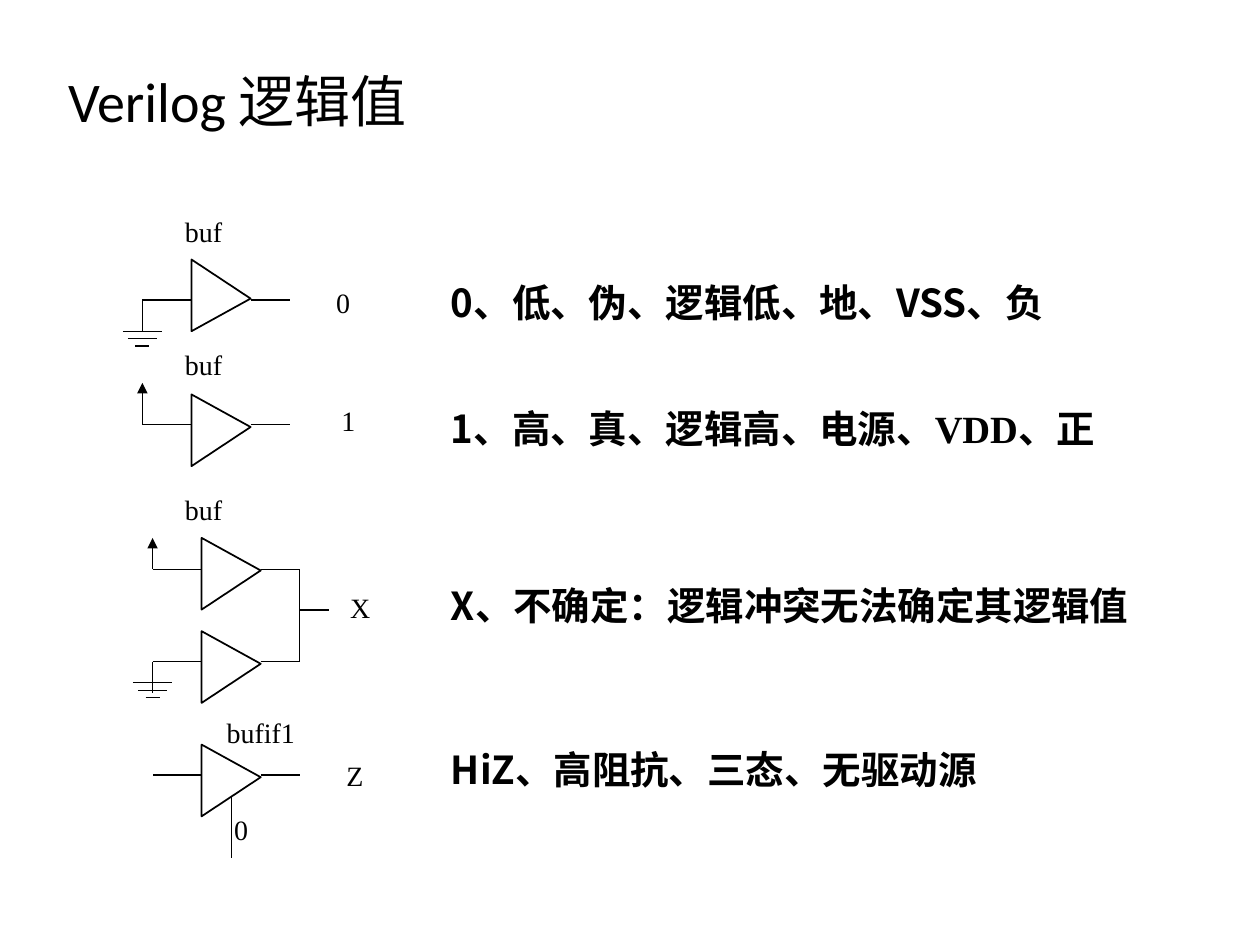
from lxml import etree
from pptx import Presentation
from pptx.dml.color import RGBColor
from pptx.enum.shapes import MSO_CONNECTOR, MSO_SHAPE
from pptx.enum.text import MSO_ANCHOR, MSO_AUTO_SIZE, PP_ALIGN
from pptx.oxml.ns import qn
from pptx.util import Pt

STRAIGHT = MSO_CONNECTOR.STRAIGHT
TRIANGLE, RECTANGLE = MSO_SHAPE.ISOSCELES_TRIANGLE, MSO_SHAPE.RECTANGLE
TOP, MIDDLE = MSO_ANCHOR.TOP, MSO_ANCHOR.MIDDLE
GROW, NO_AUTOFIT = MSO_AUTO_SIZE.SHAPE_TO_FIT_TEXT, MSO_AUTO_SIZE.NONE
LEFT, JUSTIFY = PP_ALIGN.LEFT, PP_ALIGN.JUSTIFY

BLACK = RGBColor(0x00, 0x00, 0x00)
WHITE = RGBColor(0xFF, 0xFF, 0xFF)
TITLE_FONT, TEXT_FONT, LABEL_FONT = "Calibri", "Noto Sans CJK SC", "Times New Roman"

GATE_WIDTH, GATE_HEIGHT = 33.8, 41
INPUT_LENGTH, OUTPUT_LENGTH = 28, 22.3
THICK, THIN = 1, 0.75

GATES = {
    "low": (109.4, 148.3, 171.4, 0.545),
    "high": (109.4, 225.4, 242.6, 0.455),
    "conflict_high": (115.2, 307.4, 325.4, 0.455),
    "conflict_low": (115.2, 360.7, 378, 0.455),
    "tristate": (115.2, 425.5, 442.8, 0.455),
}
LABELS = [
    ("0", 185, 159.8, 44.6),
    ("1", 188, 226.8, 38.9),
    ("X", 193, 334.1, 33.8),
    ("Z", 190.8, 429.8, 44.6),
    ("0", 126.7, 460.8, 44.6),
    ("buf", 98.6, 118.8, 72.7),
    ("buf", 98.6, 195.1, 72.7),
    ("buf", 98.6, 277.9, 72.7),
    ("bufif1", 122.4, 405.4, 72.7),
]
DESCRIPTIONS = [
    (156.2, [("0、低、伪、逻辑低、地、VSS、负", TEXT_FONT)]),
    (228.2, [("1、高、真、逻辑高、电源、", TEXT_FONT), ("VDD、正", LABEL_FONT)]),
    (329, [("X、不确定：逻辑冲突无法确定其逻辑值", TEXT_FONT)]),
    (422.6, [("HiZ、高阻抗、三态、无驱动源", TEXT_FONT)]),
]


def set_font(font, name, size, bold=False):
    font.name = name
    font.size = Pt(size)
    font.bold = bold
    font.color.rgb = BLACK


def add_wire(shapes, x1, y1, x2, y2, width=THIN, arrow=False):
    wire = shapes.add_connector(STRAIGHT, Pt(x1), Pt(y1), Pt(x2), Pt(y2))
    wire.line.color.rgb = BLACK
    wire.line.width = Pt(width)
    if arrow:
        line = wire.line._get_or_add_ln()
        etree.SubElement(line, qn("a:tailEnd"), type="triangle")
    etree.SubElement(wire._element.spPr, qn("a:effectLst"))


def add_gate(shapes, left, top, wire_y, apex):
    shift = (GATE_HEIGHT - GATE_WIDTH) / 2
    gate = shapes.add_shape(TRIANGLE, Pt(left - shift), Pt(top + shift),
                            Pt(GATE_HEIGHT), Pt(GATE_WIDTH))
    gate.rotation = 90
    gate.adjustments[0] = apex
    gate.shadow.inherit = False
    gate.fill.background()
    gate.line.color.rgb = BLACK
    gate.line.width = Pt(THICK)
    right = left + GATE_WIDTH
    add_wire(shapes, right, wire_y, right + OUTPUT_LENGTH, wire_y, THICK)
    add_wire(shapes, left, wire_y, left - INPUT_LENGTH, wire_y, THICK)
    return left - INPUT_LENGTH, right + OUTPUT_LENGTH, wire_y


def add_ground(shapes, x, y, drop):
    add_wire(shapes, x, y, x, y + 18)
    for index, half in enumerate((11.2, 8.3, 4)):
        bar_y = y + drop + index * 4.2
        add_wire(shapes, x - half, bar_y, x + half, bar_y)


def add_power(shapes, x, y, rise):
    add_wire(shapes, x, y, x, y - rise, arrow=True)


def add_label(shapes, text, left, top, width):
    label = shapes.add_textbox(Pt(left), Pt(top), Pt(width), Pt(26.6))
    label.text_frame.word_wrap = True
    label.text_frame.auto_size = GROW
    paragraph = label.text_frame.paragraphs[0]
    paragraph.text = text
    set_font(paragraph.font, LABEL_FONT, 16)


def add_circuits(slide):
    shapes = slide.shapes.add_group_shape().shapes
    ports = {name: add_gate(shapes, *gate) for name, gate in GATES.items()}

    for name, drop in (("low", 18), ("conflict_low", 12.2)):
        input_x, _, y = ports[name]
        add_ground(shapes, input_x, y, drop)
    for name, rise in (("high", 23.8), ("conflict_high", 18)):
        input_x, _, y = ports[name]
        add_power(shapes, input_x, y, rise)

    _, bus_x, upper_y = ports["conflict_high"]
    lower_y = ports["conflict_low"][2]
    add_wire(shapes, bus_x, upper_y, bus_x, lower_y)
    add_wire(shapes, bus_x, 348.5, bus_x + 16.6, 348.5)

    left, top, _, _ = GATES["tristate"]
    control_x = left + GATE_WIDTH / 2
    add_wire(shapes, control_x, top + 29.5, control_x, top + 64.8)

    for label in LABELS:
        add_label(shapes, *label)


def add_description(slide, left, top, width, height, runs):
    box = slide.shapes.add_shape(RECTANGLE, Pt(left), Pt(top), Pt(width), Pt(height))
    box.shadow.inherit = False
    box.fill.solid()
    box.fill.fore_color.rgb = WHITE
    box.line.fill.background()
    frame = box.text_frame
    frame.word_wrap = True
    frame.auto_size = GROW
    frame.vertical_anchor = TOP
    paragraph = frame.paragraphs[0]
    paragraph.alignment = JUSTIFY
    properties = paragraph._p.get_or_add_pPr()
    properties.set("marL", str(Pt(27)))
    properties.set("indent", str(Pt(-27)))
    set_font(paragraph.font, TEXT_FONT, 22, bold=True)
    for text, font_name in runs:
        run = paragraph.add_run()
        run.text = text
        set_font(run.font, font_name, 22, bold=True)
        etree.SubElement(run.font._element, qn("a:ea"), typeface=TEXT_FONT)


def set_title(slide, left, top, width, height):
    title = slide.shapes.title
    title.left, title.top, title.width, title.height = map(Pt, (left, top, width, height))
    title.text_frame.auto_size = NO_AUTOFIT
    title.text_frame.vertical_anchor = MIDDLE
    paragraph = title.text_frame.paragraphs[0]
    paragraph.text = "Verilog 逻辑值"
    paragraph.alignment = LEFT
    paragraph.line_spacing = 0.9
    set_font(paragraph.font, TITLE_FONT, 32)


def main():
    presentation = Presentation()
    presentation.slide_width, presentation.slide_height = Pt(720), Pt(540)
    slide = presentation.slides.add_slide(presentation.slide_layouts[5])
    set_title(slide, 31.7, 28.8, 620.6, 61.2)
    add_circuits(slide)
    for top, runs in DESCRIPTIONS:
        add_description(slide, 250.6, top, 401.8, 33.8, runs)
    presentation.save("out.pptx")


if __name__ == "__main__":
    main()
